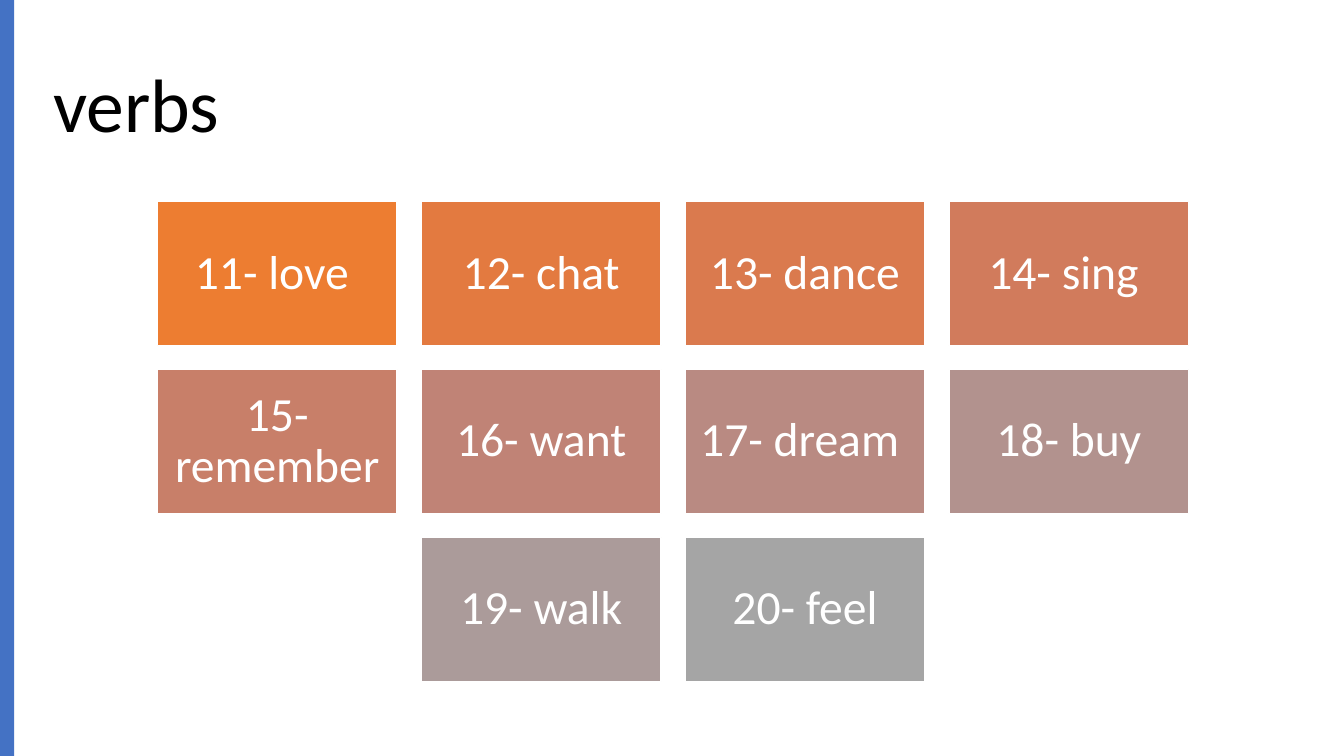
"""Build a slide of ten numbered verbs on a grid of coloured tiles."""
from pptx import Presentation
from pptx import util as u
from pptx.dml.color import RGBColor
from pptx.enum import shapes, text

COLORS = {"accent": "4472C4", "white": "FFFFFF", "black": "000000"}
VERB_ROWS = [
    [("11- love ", "ED7D31"), ("12- chat", "E37A40"), ("13- dance", "DA7A4E"), ("14- sing ", "D17B5C")],
    [("15- remember", "C87F69"), ("16- want", "C08376"), ("17- dream ", "B98A82"), ("18- buy", "B2928E")],
    [("19- walk", "AB9B9A"), ("20- feel", "A5A5A5")],
]
COLUMNS = 4
GRID_LEFT, GRID_TOP = 1.56, 2.0
TILE_WIDTH, TILE_HEIGHT = 2.38, 1.43
COLUMN_STEP, ROW_STEP = 2.617, 1.665


def add_rectangle(slide, left, top, width, height, fill):
    shape = slide.shapes.add_shape(shapes.MSO_SHAPE.RECTANGLE, left, top, width, height)
    shape.shadow.inherit = False
    shape.fill.solid()
    shape.fill.fore_color.rgb = RGBColor.from_string(fill)
    shape.line.fill.background()
    return shape


def write_text(shape, words, size, color, align):
    frame = shape.text_frame
    frame.word_wrap = True
    frame.vertical_anchor = text.MSO_ANCHOR.MIDDLE
    paragraph = frame.paragraphs[0]
    paragraph.alignment = align
    paragraph.line_spacing = 0.9
    run = paragraph.add_run()
    run.text = words
    run.font.name = "Calibri"
    run.font.size = u.Pt(size)
    run.font.color.rgb = RGBColor.from_string(color)
    return frame


presentation = Presentation()
presentation.slide_width = u.Inches(13.33)
presentation.slide_height = u.Inches(7.5)
slide = presentation.slides.add_slide(presentation.slide_layouts[6])

title = slide.shapes.add_textbox(u.Inches(0.43), u.Inches(0.35), u.Inches(12.48), u.Inches(1.45))
write_text(title, "verbs", 54, COLORS["black"], text.PP_ALIGN.LEFT)

add_rectangle(slide, 0, 0, u.Inches(0.14), presentation.slide_height, COLORS["accent"])

for row, verbs in enumerate(VERB_ROWS):
    first_column = (COLUMNS - len(verbs)) / 2
    for column, (verb, fill) in enumerate(verbs, start=int(first_column)):
        tile = add_rectangle(
            slide,
            u.Inches(GRID_LEFT + column * COLUMN_STEP),
            u.Inches(GRID_TOP + row * ROW_STEP),
            u.Inches(TILE_WIDTH),
            u.Inches(TILE_HEIGHT),
            fill,
        )
        tile.line.color.rgb = RGBColor.from_string(COLORS["white"])
        tile.line.width = u.Pt(1)
        frame = write_text(tile, verb, 34, COLORS["white"], text.PP_ALIGN.CENTER)
        frame.margin_left = frame.margin_right = u.Inches(0.14)
        frame.margin_top = frame.margin_bottom = u.Inches(0.14)

presentation.save("out.pptx")
